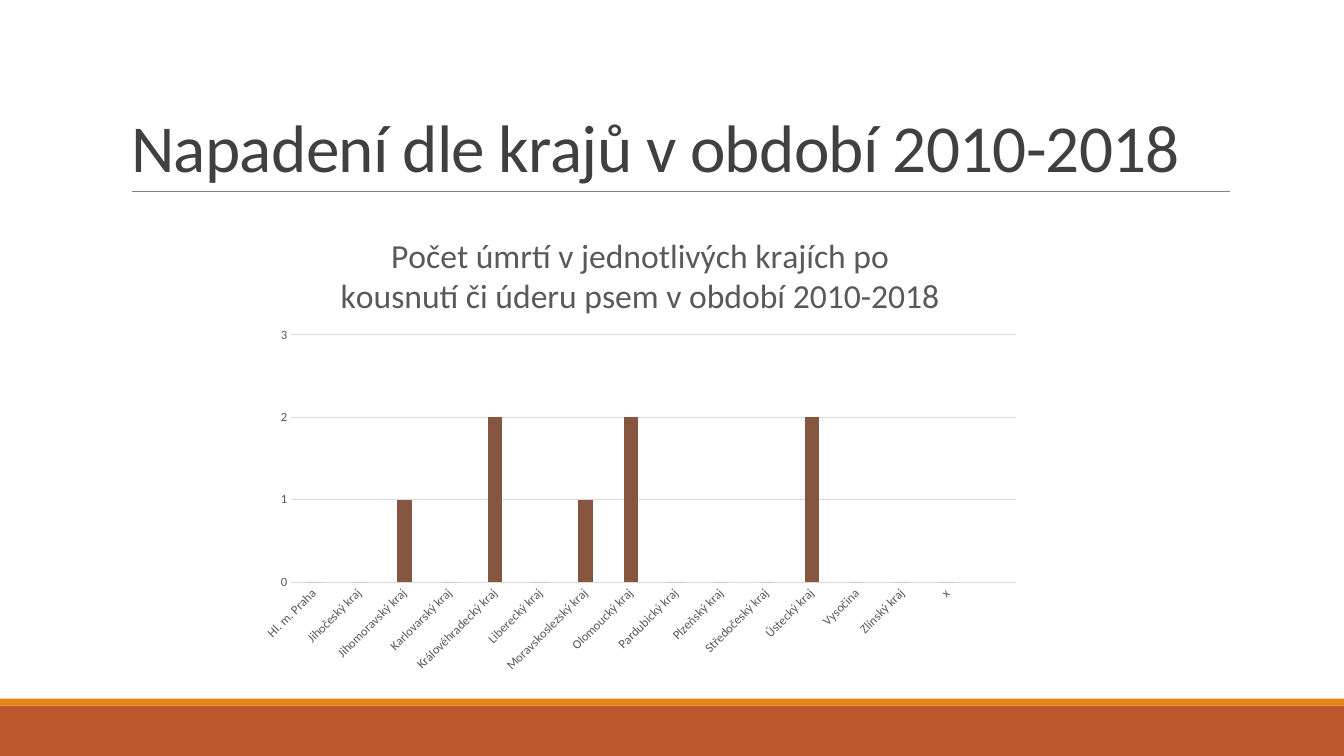
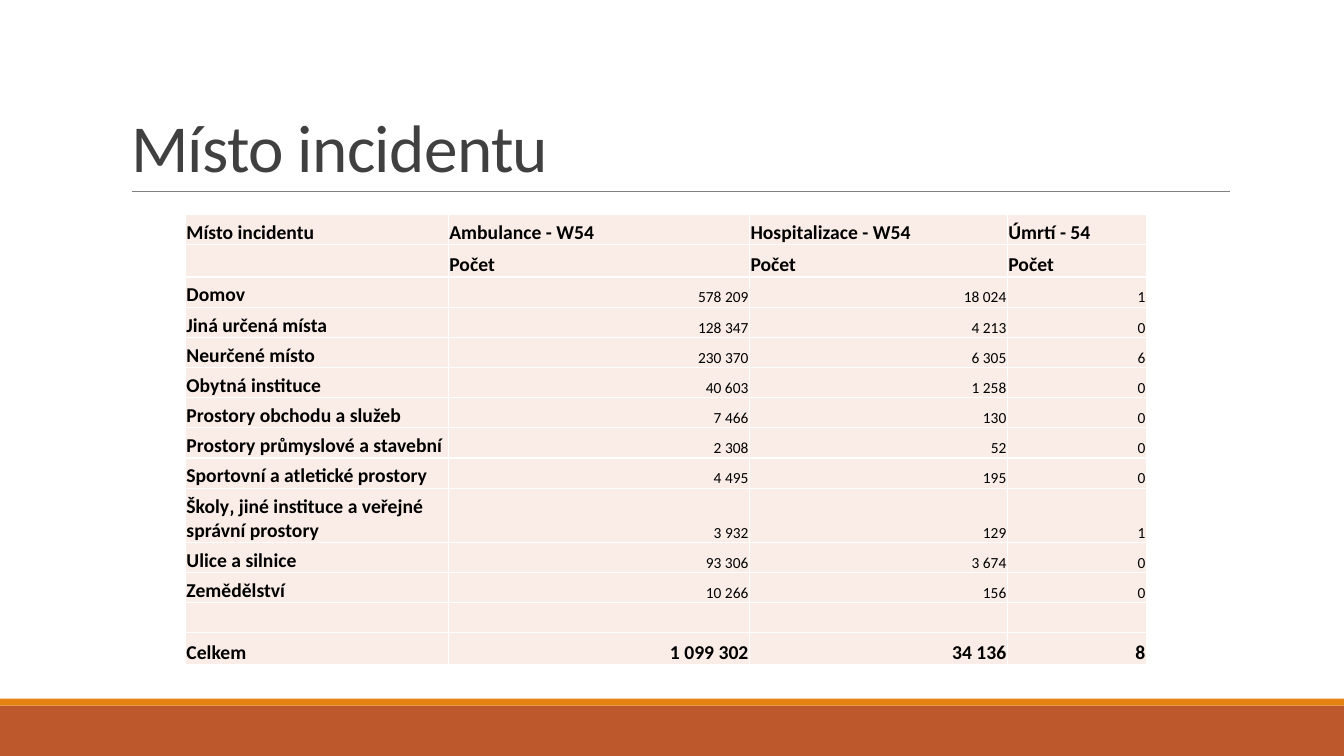
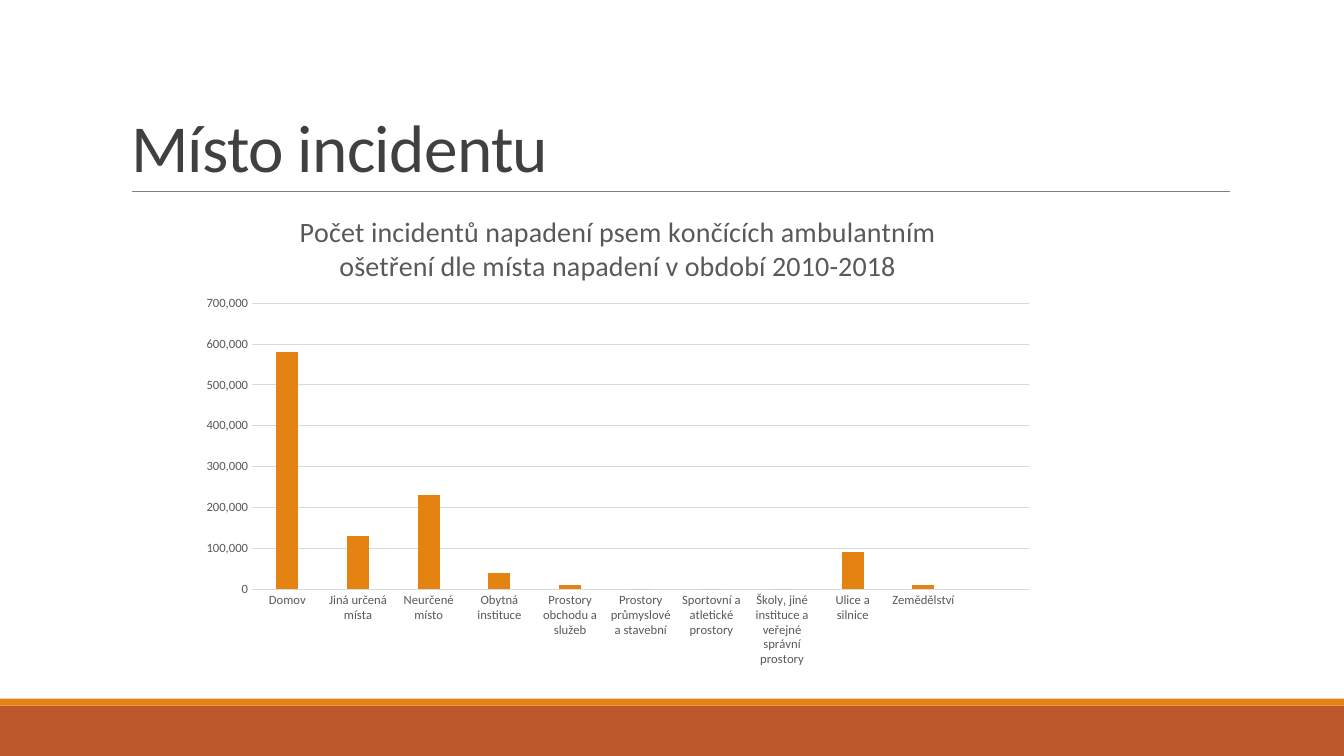
from lxml import etree
from pptx import Presentation
from pptx.chart.data import CategoryChartData
from pptx.dml.color import RGBColor
from pptx.enum.chart import XL_CHART_TYPE, XL_TICK_MARK
from pptx.enum.shapes import MSO_CONNECTOR, MSO_SHAPE
from pptx.enum.text import MSO_ANCHOR, PP_ALIGN
from pptx.oxml import parse_xml
from pptx.oxml.ns import nsdecls, qn
from pptx.util import Inches, Pt

COLUMNS = XL_CHART_TYPE.COLUMN_CLUSTERED
NO_TICK = XL_TICK_MARK.NONE
STRAIGHT = MSO_CONNECTOR.STRAIGHT
RECTANGLE = MSO_SHAPE.RECTANGLE
BOTTOM = MSO_ANCHOR.BOTTOM
LEFT, RIGHT = PP_ALIGN.LEFT, PP_ALIGN.RIGHT

FONT = "Calibri"
COLORS = {
    "band": "BD582C", "accent": "E48312", "rule": "808080", "title": "404040",
    "chart_text": "595959", "grid": "D9D9D9", "deaths": "865640",
    "cell": "FAEDE7", "cell_border": "FFFFFF", "cell_text": "000000",
}
SLIDE_W, SLIDE_H = Inches(13.33), Inches(7.5)

# Boxes are left, top, width, height in percent of the slide
BAND = (0, 93.33, 100, 6.67)
ACCENT = (0, 92.4, 100, 0.93)
RULE = (9.83, 25.33, 81.7, 0)
TITLE = (9.03, 4.13, 82.5, 21.2)
DEATHS_CHART = (18.53, 28, 58.2, 62.27)
PLACES_TABLE = (13.8, 28.4, 71.5, 59.6)
PLACES_CHART = (14.1, 25.33, 63.77, 64.13)
# Plot areas, in percent of their chart
DEATHS_PLOT = (5.4, 26.2, 92.6, 52.5)
PLACES_PLOT = (7.3, 23.05, 90.7, 59)

DEATHS_BY_REGION = {
    "Hl. m. Praha": 0, "Jihočeský kraj": 0, "Jihomoravský kraj": 1,
    "Karlovarský kraj": 0, "Královéhradecký kraj": 2, "Liberecký kraj": 0,
    "Moravskoslezský kraj": 1, "Olomoucký kraj": 2, "Pardubický kraj": 0,
    "Plzeňský kraj": 0, "Středočeský kraj": 0, "Ústecký kraj": 2,
    "Vysočina": 0, "Zlínský kraj": 0, "x": 0,
}
TABLE_HEAD = [
    ("Místo incidentu", "Ambulance - W54", "Hospitalizace - W54", "Úmrtí - 54"),
    ("", "Počet", "Počet", "Počet"),
]
PLACES = [
    ("Domov", 578209, 18024, 1),
    ("Jiná určená místa", 128347, 4213, 0),
    ("Neurčené místo", 230370, 6305, 6),
    ("Obytná instituce", 40603, 1258, 0),
    ("Prostory obchodu a služeb", 7466, 130, 0),
    ("Prostory průmyslové a stavební", 2308, 52, 0),
    ("Sportovní a atletické prostory", 4495, 195, 0),
    ("Školy‚ jiné instituce a veřejné správní prostory", 3932, 129, 1),
    ("Ulice a silnice", 93306, 3674, 0),
    ("Zemědělství", 10266, 156, 0),
]
TOTAL = ("Celkem", 1099302, 34136, 8)
COLUMN_WEIGHTS = [261, 299, 256, 138]
ROW_WEIGHTS = [30, 32] + [30] * 7 + [54] + [30] * 3 + [32]


def rgb(name):
    return RGBColor.from_string(COLORS[name])


def place(box):
    """Turn a box in percent of the slide into lengths."""
    return [round(share * side / 100)
            for share, side in zip(box, (SLIDE_W, SLIDE_H) * 2)]


def style_font(font, size, color, bold=False):
    font.name, font.size, font.bold = FONT, Pt(size), bold
    font.color.rgb = rgb(color)


def add_bar(slide, box, color):
    bar = slide.shapes.add_shape(RECTANGLE, *place(box))
    bar.shadow.inherit = False
    bar.fill.solid()
    bar.fill.fore_color.rgb = rgb(color)
    bar.line.fill.background()


def add_rule(slide, box):
    left, top, width, height = place(box)
    rule = slide.shapes.add_connector(STRAIGHT, left, top, left + width, top + height)
    rule.line.color.rgb = rgb("rule")
    rule.line.width = Pt(0.5)
    etree.SubElement(rule._element.spPr, qn("a:effectLst"))


def add_title(slide, box, text):
    frame = slide.shapes.add_textbox(*place(box)).text_frame
    frame.word_wrap = True
    frame.vertical_anchor = BOTTOM
    frame.text = text
    paragraph = frame.paragraphs[0]
    paragraph.line_spacing = 0.85
    font = paragraph.runs[0].font
    style_font(font, 48, "title")
    font._element.set("spc", "-50")


def new_slide(deck, title):
    """Add a slide with the shared bands, rule and title."""
    slide = deck.slides.add_slide(deck.slide_layouts[6])
    add_bar(slide, BAND, "band")
    add_bar(slide, ACCENT, "accent")
    add_rule(slide, RULE)
    add_title(slide, TITLE, title)
    return slide


def set_plot_area(chart, box):
    """Fix the inner plot area, given in percent of the chart."""
    plot_area = chart._chartSpace.chart.plotArea
    for layout in plot_area.findall(qn("c:layout")):
        plot_area.remove(layout)
    sizes = "".join(f'<c:{key} val="{share / 100:.4f}"/>'
                    for key, share in zip("xywh", box))
    plot_area.insert(0, parse_xml(
        f'<c:layout {nsdecls("c")}><c:manualLayout><c:layoutTarget val="inner"/>'
        f'<c:xMode val="edge"/><c:yMode val="edge"/>{sizes}'
        "</c:manualLayout></c:layout>"))


def add_column_chart(slide, box, title, title_size, values, color, top_value, step,
                     plot_box, label_angle=0):
    data = CategoryChartData(number_format="#,##0")
    data.categories = [*values, ""]
    data.add_series("Series 1", [*values.values(), None])
    chart = slide.shapes.add_chart(COLUMNS, *place(box), data).chart
    chart.has_legend = False
    style_font(chart.font, 10, "cell_text")

    chart.has_title = True
    heading = chart.chart_title.text_frame
    heading.text = title
    style_font(heading.paragraphs[0].runs[0].font, title_size, "chart_text")
    chart.chart_title.include_in_layout = False
    set_plot_area(chart, plot_box)

    plot = chart.plots[0]
    plot.gap_width, plot.overlap, plot.vary_by_categories = 219, -27, False
    bars = plot.series[0].format.fill
    bars.solid()
    bars.fore_color.rgb = rgb(color)

    category_axis, value_axis = chart.category_axis, chart.value_axis
    for axis in (category_axis, value_axis):
        axis.major_tick_mark = axis.minor_tick_mark = NO_TICK
        style_font(axis.tick_labels.font, 9, "chart_text")
    if label_angle:
        body = category_axis._element.txPr.find(qn("a:bodyPr"))
        body.set("rot", str(label_angle * 60000))
    value_axis.minimum_scale, value_axis.maximum_scale = 0, top_value
    value_axis.major_unit = step
    value_axis.tick_labels.number_format = "#,##0"
    value_axis.tick_labels.number_format_is_linked = False
    value_axis.format.line.fill.background()
    for line in (category_axis.format.line, value_axis.major_gridlines.format.line):
        line.color.rgb = rgb("grid")
        line.width = Pt(0.75)


def border_cell(cell):
    properties = cell._tc.get_or_add_tcPr()
    for position, side in enumerate(("lnL", "lnR", "lnT", "lnB")):
        properties.insert(position, parse_xml(
            f'<a:{side} {nsdecls("a")} w="12700"><a:solidFill>'
            f'<a:srgbClr val="{COLORS["cell_border"]}"/></a:solidFill></a:{side}>'))


def fill_cell(cell, content, bold):
    is_number = isinstance(content, int)
    cell.fill.solid()
    cell.fill.fore_color.rgb = rgb("cell")
    border_cell(cell)
    cell.margin_left = cell.margin_right = cell.margin_top = Inches(0.01)
    cell.margin_bottom = 0
    cell.vertical_anchor = BOTTOM
    cell.text = f"{content:,}".replace(",", " ") if is_number else content
    paragraph = cell.text_frame.paragraphs[0]
    paragraph.alignment = RIGHT if is_number else LEFT
    for run in paragraph.runs:
        style_font(run.font, 14 if bold else 11, "cell_text", bold)
    if not content and not is_number:
        paragraph._p.get_or_add_endParaRPr().set("sz", "1400")


def add_places_table(slide, box):
    rows = [*TABLE_HEAD, *PLACES, ("",) * 4, TOTAL]
    left, top, width, height = place(box)
    table = slide.shapes.add_table(
        len(rows), len(COLUMN_WEIGHTS), left, top, width, height).table
    table.first_row = table.horz_banding = False
    for column, weight in zip(table.columns, COLUMN_WEIGHTS):
        column.width = round(width * weight / sum(COLUMN_WEIGHTS))
    for row, weight in zip(table.rows, ROW_WEIGHTS):
        row.height = round(height * weight / sum(ROW_WEIGHTS))
    for r, row in enumerate(rows):
        for c, content in enumerate(row):
            bold = isinstance(content, str) or row is TOTAL
            fill_cell(table.cell(r, c), content, bold)


def main():
    deck = Presentation()
    deck.slide_width, deck.slide_height = SLIDE_W, SLIDE_H

    add_column_chart(
        new_slide(deck, "Napadení dle krajů v období 2010-2018"), DEATHS_CHART,
        "Počet úmrtí v jednotlivých krajích po kousnutí či úderu psem v období 2010-2018",
        24, DEATHS_BY_REGION, "deaths", 3, 1, DEATHS_PLOT, label_angle=-45)

    add_places_table(new_slide(deck, "Místo incidentu"), PLACES_TABLE)

    add_column_chart(
        new_slide(deck, "Místo incidentu"), PLACES_CHART,
        "Počet incidentů napadení psem končících ambulantním ošetření dle místa "
        "napadení v období 2010-2018",
        20, {place_name: round(treated, -4) for place_name, treated, *_ in PLACES},
        "accent", 700000, 100000, PLACES_PLOT)

    deck.save("out.pptx")


if __name__ == "__main__":
    main()
